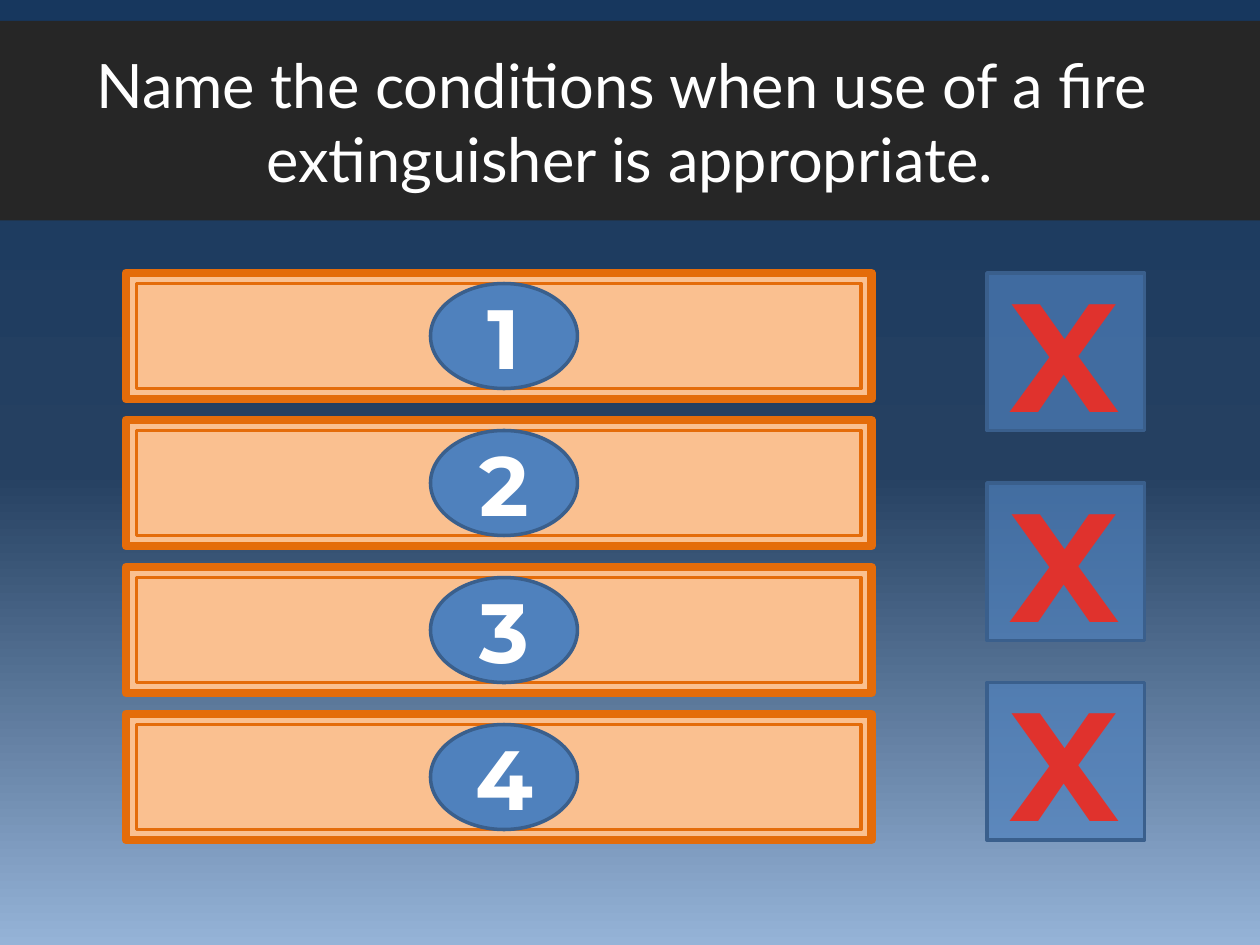
from copy import deepcopy

from lxml.etree import SubElement
from pptx import Presentation
from pptx.dml.color import RGBColor
from pptx.enum.shapes import MSO_SHAPE
from pptx.enum.text import MSO_ANCHOR, MSO_AUTO_SIZE, PP_ALIGN
from pptx.oxml.ns import qn
from pptx.util import Inches, Pt

NAVY = RGBColor(0x17, 0x37, 0x5E)
DEEP_BLUE = RGBColor(0x25, 0x40, 0x61)
PALE_BLUE = RGBColor(0x95, 0xB3, 0xD7)
BLUE = RGBColor(0x4F, 0x81, 0xBD)
EDGE_BLUE = RGBColor(0x3A, 0x5F, 0x8C)
CHARCOAL = RGBColor(0x26, 0x26, 0x26)
PEACH = RGBColor(0xFA, 0xC0, 0x90)
ORANGE = RGBColor(0xE4, 0x6C, 0x0A)
RED = RGBColor(0xE0, 0x32, 0x2D)
DARK_RED = RGBColor(0xA2, 0x20, 0x1C)
WHITE = RGBColor(0xFF, 0xFF, 0xFF)

COLS, ROWS = 120, 90  # grid of 1/12 inch squares
TITLE_FONT = {"name": "Lato", "size": Pt(35)}
NUMBER_FONT = {"name": "Montserrat", "size": Pt(48), "bold": True}
STRIKE_FONT = {"name": "Montserrat", "size": Pt(88), "bold": True}


def grid(*cells):
    return [Inches(c / 12) for c in cells]


def set_gradient(fill, stops):
    """Fill from top to bottom with (share, colour) stops."""
    fill.gradient()
    fill.gradient_angle = 270
    first = fill.gradient_stops[0]._gs
    for _ in stops[2:]:
        first.addnext(deepcopy(first))
    for stop, (position, color) in zip(fill.gradient_stops, stops):
        stop.color.rgb = color
        stop.position = position


def add_box(shapes, kind, box, fill=None, line=None, width=2):
    sp = shapes.add_shape(kind, *grid(*box))
    sp.shadow.inherit = False
    if fill is not None:
        sp.fill.solid()
        sp.fill.fore_color.rgb = fill
    if line is None:
        sp.line.fill.background()
    else:
        sp.line.color.rgb = line
        sp.line.width = Pt(width)
    return sp


def write(p, text, font, color=None):
    p.alignment = PP_ALIGN.CENTER
    r = p.add_run()
    r.text = text
    for name, value in font.items():
        setattr(r.font, name, value)
    if color is not None:
        r.font.color.rgb = color
    return r


def add_backdrop(s, box):
    sp = add_box(s.shapes, MSO_SHAPE.RECTANGLE, box)
    set_gradient(sp.fill, [(0, NAVY), (0.5, DEEP_BLUE), (1, PALE_BLUE)])
    s.shapes.title._element.addprevious(sp._element)  # behind the title


def add_title(s, box, lines):
    title = s.shapes.title
    title.left, title.top, title.width, title.height = grid(*box)
    title.fill.solid()
    title.fill.fore_color.rgb = CHARCOAL
    tf = title.text_frame
    tf.auto_size = MSO_AUTO_SIZE.NONE
    tf.vertical_anchor = MSO_ANCHOR.MIDDLE
    for i, line in enumerate(lines):
        p = tf.add_paragraph() if i else tf.paragraphs[0]
        write(p, line, TITLE_FONT, WHITE)


def add_answer(s, box, number):
    """Framed answer cover with its number in an ellipse."""
    x, y, w, h = box
    shapes = s.shapes.add_group_shape().shapes
    inner = (x + 1, y + 1, w - 2, h - 2)
    add_box(shapes, MSO_SHAPE.RECTANGLE, box, PEACH, ORANGE, 5)
    add_box(shapes, MSO_SHAPE.RECTANGLE, inner, PEACH, ORANGE)
    sp = add_box(shapes, MSO_SHAPE.OVAL, (x + 29, y + 1, 14, h - 2), BLUE, EDGE_BLUE)
    tf = sp.text_frame
    tf.vertical_anchor = MSO_ANCHOR.MIDDLE
    write(tf.paragraphs[0], str(number), NUMBER_FONT, WHITE)


def add_strike(s, box):
    """Translucent square with a red X."""
    x, y, w, h = box
    sp = add_box(s.shapes, MSO_SHAPE.RECTANGLE, box, BLUE, EDGE_BLUE)
    color = sp._element.spPr.find(qn("a:solidFill"))[0]
    SubElement(color, qn("a:alpha"), val="69000")

    tb = s.shapes.add_textbox(*grid(x + 1, y - 2, w - 2.25, h + 4))
    tf = tb.text_frame
    tf.word_wrap = False
    tf.auto_size = MSO_AUTO_SIZE.SHAPE_TO_FIT_TEXT
    r = write(tf.paragraphs[0], "X", STRIKE_FONT)
    set_gradient(r.font.fill, [(0.25, RED), (1, DARK_RED)])
    r.font._element.set("spc", "50")


def main():
    prs = Presentation()
    prs.slide_width, prs.slide_height = grid(COLS, ROWS)
    s = prs.slides.add_slide(prs.slide_layouts[5])

    # Backdrop and question
    add_backdrop(s, (0, 0, COLS, ROWS))
    add_title(s, (0, 2, COLS, 19), [
        "Name the conditions when use of a fire ",
        "extinguisher is appropriate.",
    ])

    # Answer board, bottom row at the back
    for number in range(4, 0, -1):
        add_answer(s, (12, 12 + 14 * number, 71, 12), number)

    # Strikes
    for row in (26, 46, 65):
        add_strike(s, (94, row, 15, 15))

    prs.save("out.pptx")


if __name__ == "__main__":
    main()
